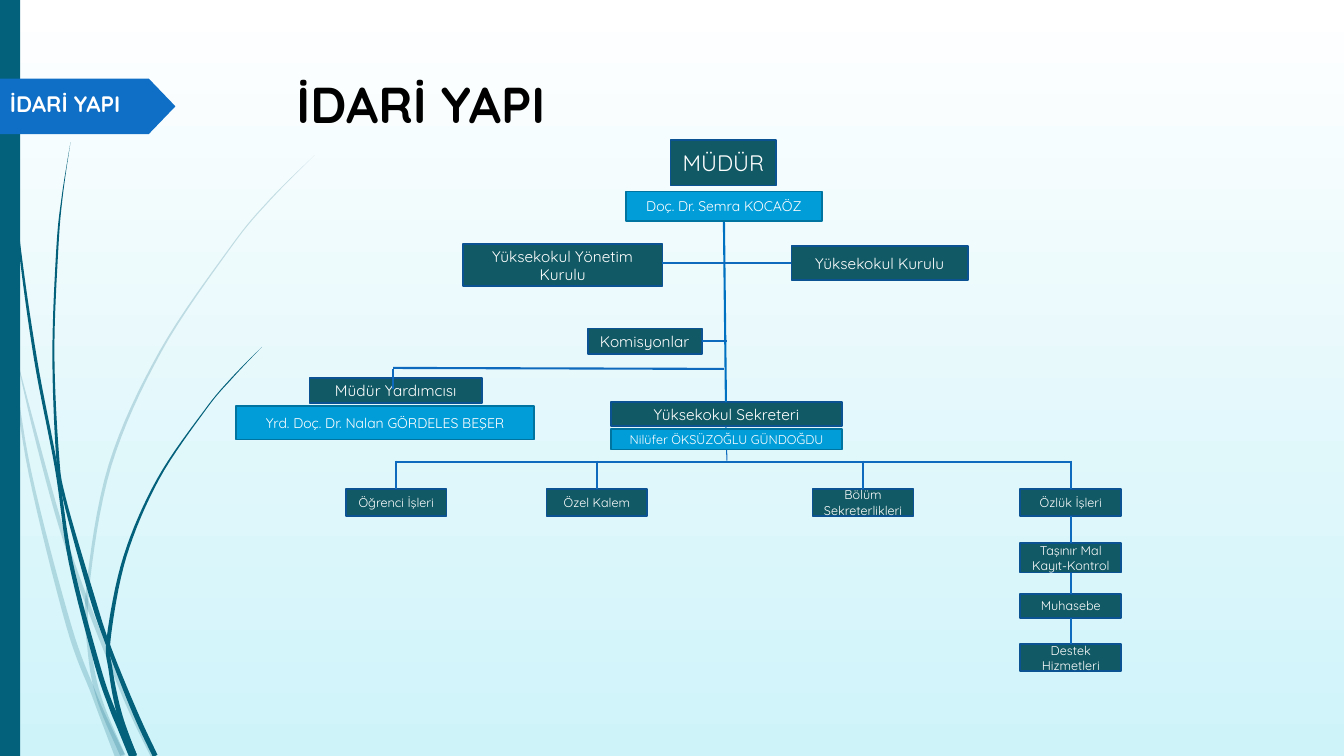
"""Builds the slide İDARİ YAPI: an organisation chart beside a wisp border."""
from math import hypot

from lxml.etree import SubElement
from pptx import Presentation
from pptx.dml.color import RGBColor
from pptx.enum.shapes import MSO_CONNECTOR as Link, MSO_SHAPE as Kind
from pptx.enum.text import MSO_ANCHOR as Anchor, PP_ALIGN as Align
from pptx.oxml.ns import qn
from pptx.util import Inches, Pt

WHITE = RGBColor(0xFF, 0xFF, 0xFF)
BLACK = RGBColor(0x00, 0x00, 0x00)
SKY = RGBColor(0xCE, 0xF3, 0xF9)
PETROL = RGBColor(0x04, 0x61, 0x7B)
BLUE = RGBColor(0x0F, 0x6F, 0xC6)
TEAL = RGBColor(0x11, 0x59, 0x64)
NAVY = RGBColor(0x0B, 0x52, 0x92)
CYAN = RGBColor(0x00, 0x9D, 0xD9)
OCEAN = RGBColor(0x00, 0x74, 0xA1)
TRUNK = RGBColor(0x00, 0x70, 0xC0)
BRANCH = RGBColor(0x0E, 0x6A, 0xBD)


def write(shape, text, size, color, bold, align, anchor):
    frame = shape.text_frame
    frame.text = text
    frame.word_wrap = True
    frame.vertical_anchor = anchor
    para = frame.paragraphs[0]
    para.alignment = align
    font = para.runs[0].font
    style = {"name": "Quicksand", "size": Pt(size), "bold": bold}
    for key, value in style.items():
        setattr(font, key, value)
    font.color.rgb = color


def block(kind, left, top, width, height, fill, edge=None):
    shape = shapes.add_shape(kind, Inches(left), Inches(top), Inches(width), Inches(height))
    shape.shadow.inherit = False
    shape.fill.solid()
    shape.fill.fore_color.rgb = fill
    if edge is None:
        shape.line.fill.background()
    else:
        shape.line.color.rgb = edge
        shape.line.width = Pt(1.25)
    return shape


deck = Presentation()
deck.slide_width = Inches(13.33)
deck.slide_height = Inches(7.5)
slide = deck.slides.add_slide(deck.slide_layouts[5])
shapes = slide.shapes

back = slide.background.fill
back.gradient()
back.gradient_angle = 270
for stop, color in zip(back.gradient_stops, (WHITE, SKY)):
    stop.color.rgb = color

wisps = [
    (20, [(0.14, 3.45, 0), (0.35, 4.3, 0.03), (0.6, 5.21, 0.04), (0.85, 5.94, 0.04),
          (1.25, 6.93, 0.05), (1.52, 7.5, 0.05)]),
    (20, [(0, 2.9, 0.02), (0.11, 3.5, 0.02), (0.3, 4.7, 0.03), (0.68, 6.2, 0.05),
          (0.93, 6.88, 0.05), (1.06, 7.2, 0.07), (1.19, 7.5, 0.1)]),
    (20, [(3.12, 1.54, 0), (2.68, 1.98, 0.01), (2.29, 2.45, 0.01), (1.59, 3.49, 0.02),
          (1.09, 4.62, 0.03), (0.87, 5.84, 0.03), (0.89, 6.46, 0.04), (0.99, 6.95, 0.05),
          (1.22, 7.5, 0.05)]),
    (100, [(0.03, 0, 0.01), (0.07, 1.1, 0.01), (0.18, 2.33, 0.02), (0.35, 3.55, 0.03),
           (0.56, 4.65, 0.03), (0.7, 5.57, 0.04), (0.96, 6.58, 0.05), (1.1, 7, 0.05),
           (1.2, 7.22, 0.07), (1.32, 7.5, 0.08)]),
    (100, [(0.7, 1.41, 0), (0.62, 1.93, 0.01), (0.57, 2.45, 0.02), (0.53, 3.49, 0.02),
           (0.57, 4.5, 0.03), (0.64, 4.95, 0.03), (0.91, 5.91, 0.05), (1.08, 6.42, 0.04),
           (1.34, 7.07, 0.05), (1.54, 7.5, 0.05)]),
    (100, [(2.6, 3.44, 0), (2.31, 3.74, 0.01), (2.04, 4.06, 0.01), (1.57, 4.75, 0.02),
           (1.24, 5.52, 0.03), (1.08, 6.32, 0.04), (1.1, 6.66, 0.04), (1.19, 7.1, 0.05),
           (1.34, 7.5, 0.04)]),
]
steps = 8
for alpha, knots in wisps:
    ends = [knots[0]] + knots + [knots[-1]]
    curve = []
    for a, b, c, d in zip(ends, ends[1:], ends[2:], ends[3:]):
        for step in range(steps):
            t = step / steps
            curve.append([
                q + t * (r - p) / 2 + t * t * (2 * p - 5 * q + 4 * r - s) / 2
                + t ** 3 * (3 * q - p - 3 * r + s) / 2
                for p, q, r, s in zip(a, b, c, d)])
    curve.append(knots[-1])
    left, right = [], []
    for i, (x, y, wide) in enumerate(curve):
        prior, later = curve[max(i - 1, 0)], curve[min(i + 1, len(curve) - 1)]
        dx, dy = later[0] - prior[0], later[1] - prior[1]
        half = wide / 2 / hypot(dx, dy)
        left.append((Inches(x - dy * half), Inches(y + dx * half)))
        right.append((Inches(x + dy * half), Inches(y - dx * half)))
    pen = shapes.build_freeform(*left[0])
    pen.add_line_segments(left[1:] + right[::-1], close=True)
    wisp = pen.convert_to_shape()
    wisp.shadow.inherit = False
    wisp.line.fill.background()
    wisp.fill.solid()
    wisp.fill.fore_color.rgb = PETROL
    tint = wisp.element.spPr.find(".//" + qn("a:srgbClr"))
    SubElement(tint, qn("a:alpha"), val=str(alpha * 1000))

block(Kind.RECTANGLE, 0, 0, 0.2, 7.5, PETROL)
arrow = block(Kind.PENTAGON, 0, 0.78, 1.74, 0.55, BLUE)
arrow.adjustments[0] = 0.48

title = shapes.title
place = {"left": 2.84, "top": 0.68, "width": 9.75, "height": 1.4}
for key, value in place.items():
    setattr(title, key, Inches(value))
write(title, "İDARİ YAPI", 36, BLACK, True, Align.LEFT, Anchor.TOP)
label = shapes.add_textbox(Inches(0), Inches(0.85), Inches(1.69), Inches(0.37))
write(label, "İDARİ YAPI", 16, WHITE, True, Align.LEFT, Anchor.TOP)

units = [
    ("MÜDÜR", 6.65, 1.39, 1.05, 0.45, 16),
    ("Yüksekokul Yönetim Kurulu", 4.59, 2.42, 1.98, 0.42, 11),
    ("Yüksekokul Kurulu", 7.85, 2.44, 1.75, 0.34, 11),
    ("Komisyonlar", 5.83, 3.26, 1.13, 0.25, 11),
    ("Müdür Yardımcısı", 3.07, 3.75, 1.71, 0.25, 11),
    ("Yüksekokul Sekreteri", 6.06, 3.99, 2.29, 0.24, 11),
]
desks = [("Öğrenci İşleri", 3.43), ("Özel Kalem", 5.42),
         ("Bölüm Sekreterlikleri", 8.06), ("Özlük İşleri", 10.12)]
tasks = [("Taşınır Mal Kayıt-Kontrol", 5.39, 0.29), ("Muhasebe", 5.89, 0.24),
         ("Destek Hizmetleri", 6.39, 0.27)]
names = [
    ("Doç. Dr. Semra KOCAÖZ", 6.21, 1.9, 1.94, 0.29, 10),
    ("Yrd. Doç. Dr. Nalan GÖRDELES BEŞER", 2.34, 4.03, 2.96, 0.33, 10),
    ("Nilüfer ÖKSÜZOĞLU GÜNDOĞDU", 6.06, 4.26, 2.29, 0.2, 9),
]
units += [(text, x, 4.85, 1, 0.27, 9) for text, x in desks]
units += [(text, 10.12, y, 1, high, 9) for text, y, high in tasks]

lines = [
    (7.18, 2.19, 7.2, 3.99, TRUNK, 1.5),
    (6.57, 2.61, 7.85, 2.61, BRANCH, 1.5),
    (6.96, 3.38, 7.21, 3.38, BRANCH, 1.5),
    (3.9, 3.65, 7.18, 3.66, BRANCH, 1.5),
    (3.9, 3.66, 3.9, 3.86, BRANCH, 1.5),
    (7.2, 4.23, 7.21, 4.57, BRANCH, 0.75),
    (3.93, 4.58, 10.62, 4.58, BRANCH, 1.5),
]
lines += [(x + 0.5, 4.57, x + 0.5, 4.85, BRANCH, 1.5) for text, x in desks]
foot = 5.12
for text, y, high in tasks:
    lines.append((10.62, foot, 10.62, y, BRANCH, 1.5))
    foot = y + high

for text, x, y, wide, high, size in units:
    box = block(Kind.RECTANGLE, x, y, wide, high, TEAL, NAVY)
    write(box, text, size, WHITE, False, Align.CENTER, Anchor.MIDDLE)
for x1, y1, x2, y2, color, weight in lines:
    line = shapes.add_connector(Link.STRAIGHT, Inches(x1), Inches(y1), Inches(x2), Inches(y2))
    line.line.color.rgb = color
    line.line.width = Pt(weight)
    SubElement(line.element.spPr, qn("a:effectLst"))
for text, x, y, wide, high, size in names:
    box = block(Kind.RECTANGLE, x, y, wide, high, CYAN, OCEAN)
    write(box, text, size, WHITE, False, Align.CENTER, Anchor.MIDDLE)

deck.save("out.pptx")
